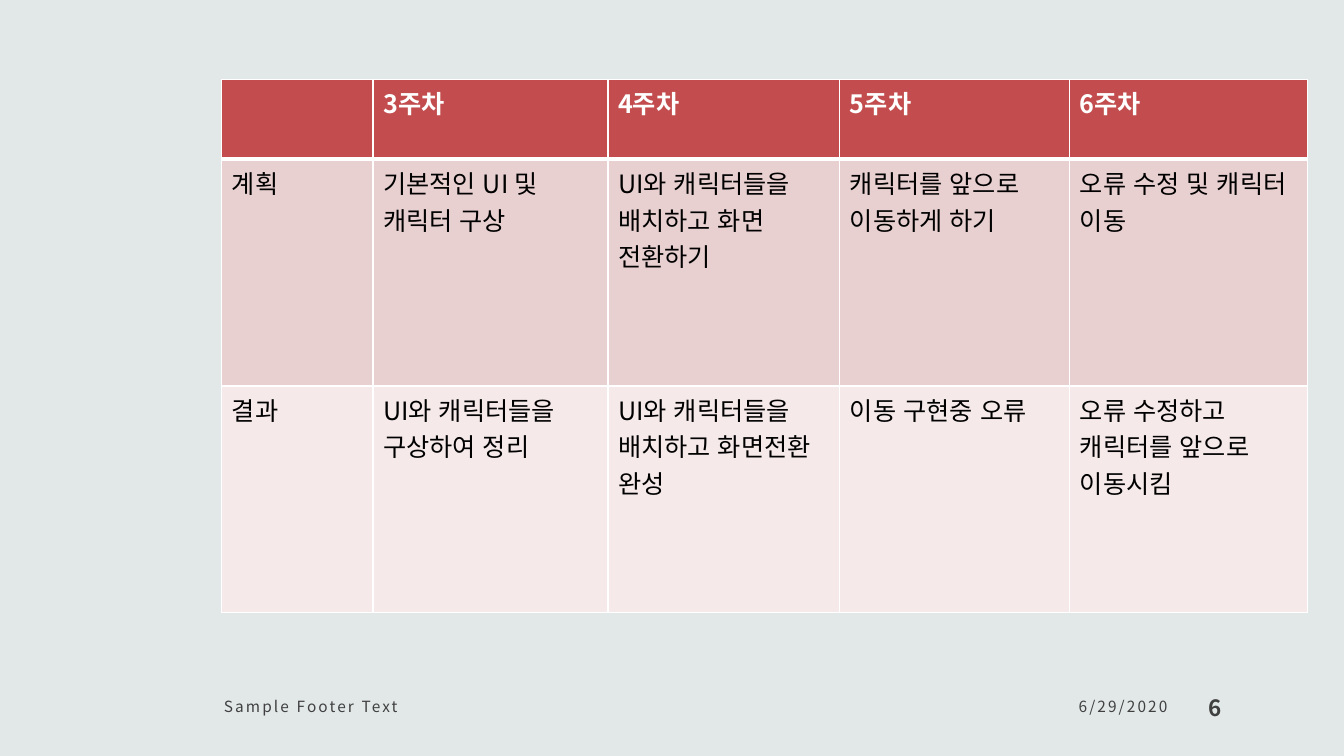
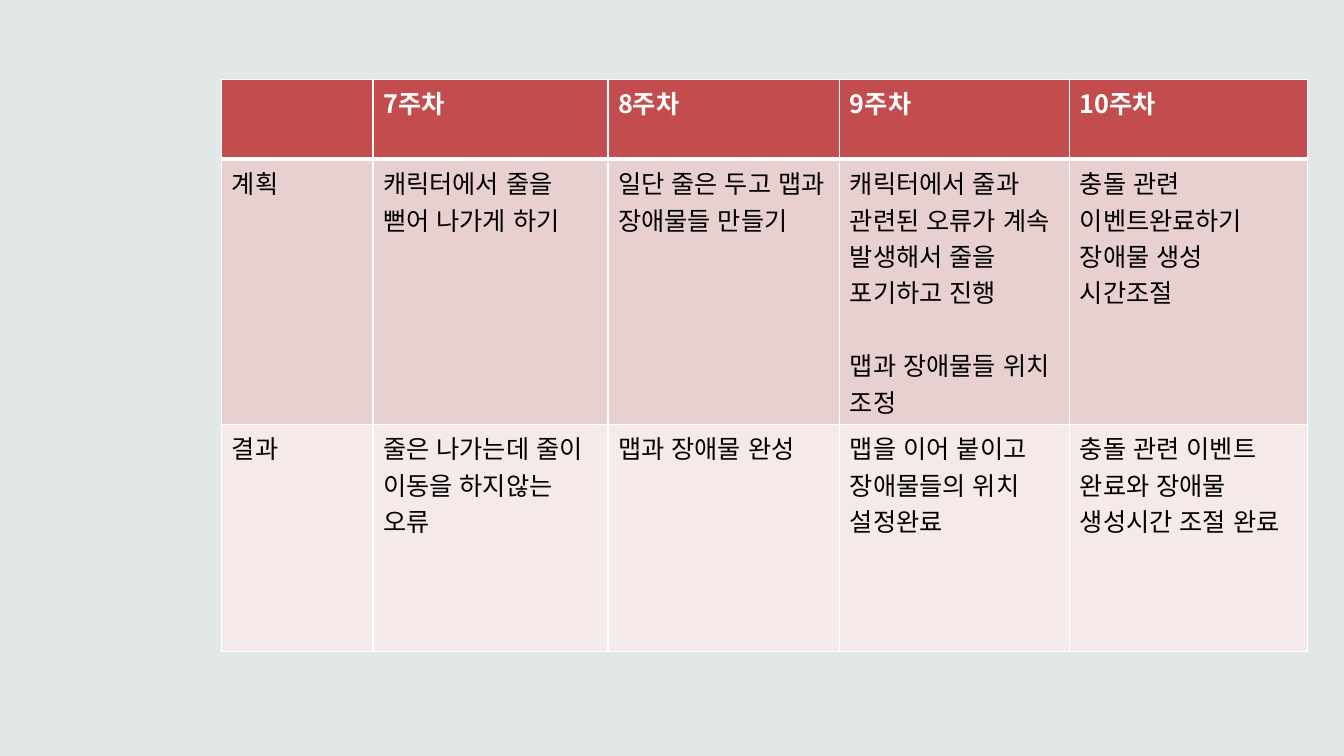
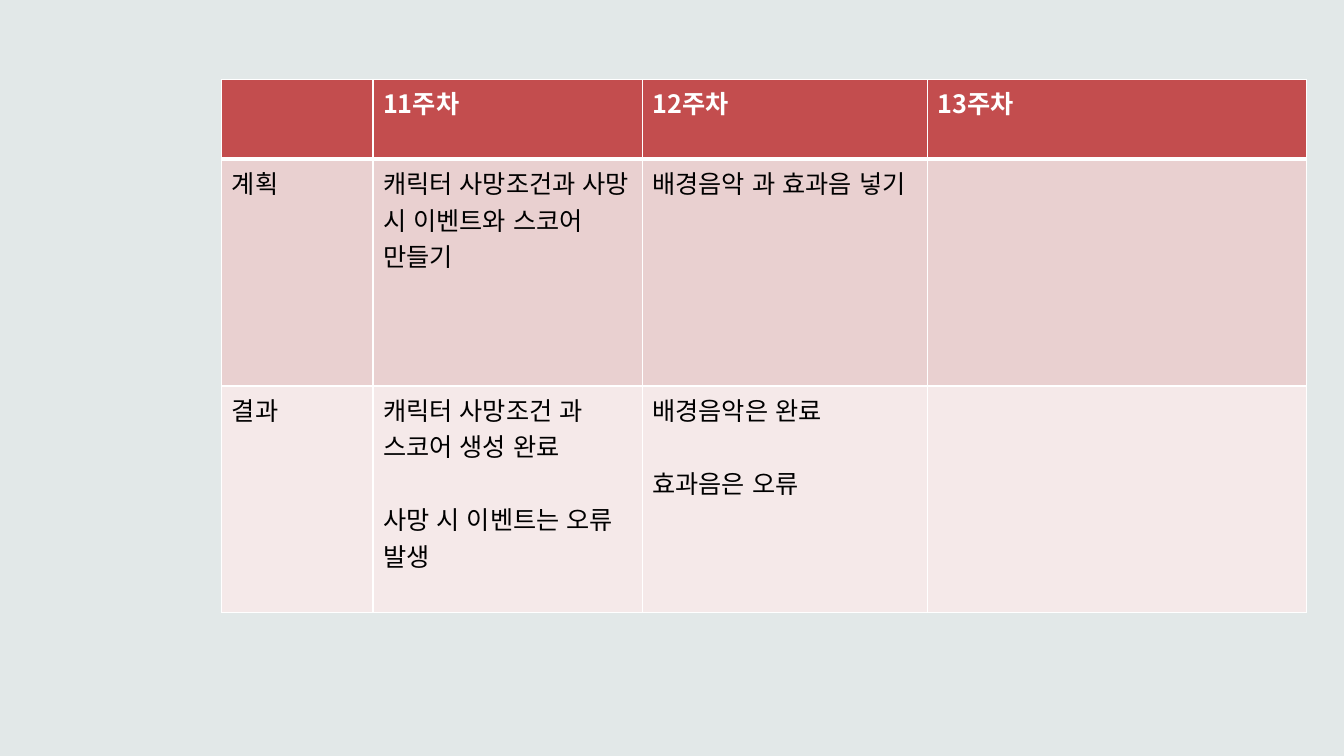
import pptx
import pptx.dml.color
import pptx.enum.lang
import pptx.enum.text
import pptx.oxml
import pptx.oxml.ns
import pptx.util

Inches = pptx.util.Inches
Pt = pptx.util.Pt
ALIGN = pptx.enum.text.PP_ALIGN
ANCHOR = pptx.enum.text.MSO_ANCHOR
LANGUAGE = pptx.enum.lang.MSO_LANGUAGE_ID

FONT = "Noto Sans CJK JP"
COLORS = {
    "background": "E2E8E8",
    "header": "C34D4E",
    "plan": "E9D0D0",
    "result": "F5E9E9",
    "white": "FFFFFF",
    "black": "000000",
    "footer": "404040",
}
TABLE_LEFT, TABLE_TOP = 2.2, 0.79
ROW_HEIGHTS = [0.79, 2.25, 2.25]
TALL_PLAN_HEIGHTS = [0.79, 2.63, 2.25]  # the plan row holds seven lines
ROW_FILLS = ["header", "plan", "result"]
BODY_SIZE = 18
PARAGRAPH_GAP = 26  # one line of body text
FOUR_WEEKS = [1.5, 2.33, 2.3, 2.28, 2.36]
THREE_WEEKS = [1.5, 2.67, 2.83, 3.76]

# Each line of a cell's text is a paragraph; "gap_cells" leave one line between them.
SCHEDULES = [
    {
        "columns": FOUR_WEEKS,
        "heights": ROW_HEIGHTS,
        "gap_cells": [],
        "rows": [
            ["", "3주차", "4주차", "5주차", "6주차"],
            ["계획", "기본적인 UI 및 캐릭터 구상", "UI와 캐릭터들을 배치하고 화면 전환하기",
             "캐릭터를 앞으로 이동하게 하기", "오류 수정 및 캐릭터 이동"],
            ["결과", "UI와 캐릭터들을 구상하여 정리", "UI와 캐릭터들을 배치하고 화면전환 완성",
             "이동 구현중 오류", "오류 수정하고 캐릭터를 앞으로 이동시킴"],
        ],
    },
    {
        "columns": FOUR_WEEKS,
        "heights": TALL_PLAN_HEIGHTS,
        "gap_cells": [(1, 3)],
        "rows": [
            ["", "7주차", "8주차", "9주차", "10주차"],
            ["계획", "캐릭터에서 줄을 뻗어 나가게 하기", "일단 줄은 두고 맵과 장애물들 만들기",
             "캐릭터에서 줄과 관련된 오류가 계속 발생해서 줄을 포기하고 진행\n맵과 장애물들 위치 조정",
             "충돌 관련 이벤트완료하기\n장애물 생성 시간조절"],
            ["결과", "줄은 나가는데 줄이 이동을 하지않는 오류", "맵과 장애물 완성",
             "맵을 이어 붙이고 장애물들의 위치 설정완료",
             "충돌 관련 이벤트 완료와 장애물 생성시간 조절 완료"],
        ],
    },
    {
        "columns": THREE_WEEKS,
        "heights": ROW_HEIGHTS,
        "gap_cells": [(2, 1), (2, 2)],
        "rows": [
            ["", "11주차", "12주차", "13주차"],
            ["계획", "캐릭터 사망조건과 사망 시 이벤트와 스코어 만들기", "배경음악 과 효과음 넣기", ""],
            ["결과", "캐릭터 사망조건 과 스코어 생성 완료\n사망 시 이벤트는 오류 발생",
             "배경음악은 완료\n효과음은 오류", ""],
        ],
    },
]

FOOTER_TOP, FOOTER_HEIGHT = 6.75, 0.5
SMALL = {"size": 11, "tracking": 1.5}
FOOTERS = [
    {"text": "Sample Footer Text", "left": 2.1, "width": 6.2, "anchor": ANCHOR.MIDDLE, "format": SMALL},
    {"text": "6/29/2020", "left": 8.59, "width": 3.11, "anchor": ANCHOR.MIDDLE,
     "format": {**SMALL, "align": ALIGN.RIGHT}},
    {"text": "6", "left": 11.87, "width": 1.3, "anchor": ANCHOR.BOTTOM,
     "format": {"size": 16, "bold": True}},
]


def rgb(name):
    return pptx.dml.color.RGBColor.from_string(COLORS[name])


def write_text(frame, text, *, size, color, bold=False, align=ALIGN.LEFT, gap=0,
               space_after=0, tracking=0, language=LANGUAGE.KOREAN):
    """Write one paragraph per line of text, with gap points between them."""
    for index, line in enumerate(text.split("\n")):
        paragraph = frame.paragraphs[0] if index == 0 else frame.add_paragraph()
        paragraph.alignment = align
        paragraph.space_before = Pt(gap if index else 0)
        paragraph.space_after = Pt(space_after)
        run = paragraph.add_run()
        run.text = line
        font = run.font
        font.size, font.bold, font.name = Pt(size), bold, FONT
        font.color.rgb = rgb(color)
        font.language_id = language
        properties = run._r.get_or_add_rPr()
        east_asian = pptx.oxml.parse_xml(
            f'<a:ea {pptx.oxml.ns.nsdecls("a")} typeface="{FONT}"/>')
        properties.find(pptx.oxml.ns.qn("a:latin")).addnext(east_asian)
        if tracking:
            properties.set("spc", str(int(tracking * 100)))


def set_borders(cell, **widths):
    properties = cell._tc.get_or_add_tcPr()
    for side in "LRTB":
        properties.append(pptx.oxml.parse_xml(
            f'<a:ln{side} {pptx.oxml.ns.nsdecls("a")} w="{Pt(widths.get(side, 1))}">'
            f'<a:solidFill><a:srgbClr val="{COLORS["white"]}"/></a:solidFill></a:ln{side}>'))


def add_schedule(slide, columns, heights, rows, gap_cells):
    table = slide.shapes.add_table(
        len(rows), len(columns), Inches(TABLE_LEFT), Inches(TABLE_TOP),
        Inches(sum(columns)), Inches(sum(heights))).table
    for column, width in zip(table.columns, columns):
        column.width = Inches(width)
    for row_index, texts in enumerate(rows):
        is_header = row_index == 0
        table.rows[row_index].height = Inches(heights[row_index])
        for column_index, text in enumerate(texts):
            cell = table.cell(row_index, column_index)
            set_borders(cell, T=3 if row_index == 1 else 1, B=3 if is_header else 1)
            cell.fill.solid()
            cell.fill.fore_color.rgb = rgb(ROW_FILLS[row_index])
            if text:
                has_gap = (row_index, column_index) in gap_cells
                write_text(cell.text_frame, text, size=BODY_SIZE, bold=is_header,
                           color="white" if is_header else "black",
                           gap=PARAGRAPH_GAP if has_gap else 0)


def add_footer(slide, text, left, width, anchor, format):
    box = slide.shapes.add_textbox(
        Inches(left), Inches(FOOTER_TOP), Inches(width), Inches(FOOTER_HEIGHT))
    frame = box.text_frame
    frame.word_wrap = True
    frame.vertical_anchor = anchor
    frame.margin_left = frame.margin_right = frame.margin_top = Inches(0.12)
    frame.margin_bottom = Inches(0.1)
    write_text(frame, text, color="footer", space_after=6,
               language=LANGUAGE.ENGLISH_US, **format)


def main():
    presentation = pptx.Presentation()
    presentation.slide_width, presentation.slide_height = Inches(13.33), Inches(7.5)
    background = presentation.slide_master.background.fill
    background.solid()
    background.fore_color.rgb = rgb("background")
    slides = []
    for schedule in SCHEDULES:
        slide = presentation.slides.add_slide(presentation.slide_layouts[6])
        add_schedule(slide, **schedule)
        slides.append(slide)
    for footer in FOOTERS:
        add_footer(slides[0], **footer)
    presentation.save("out.pptx")


if __name__ == "__main__":
    main()
